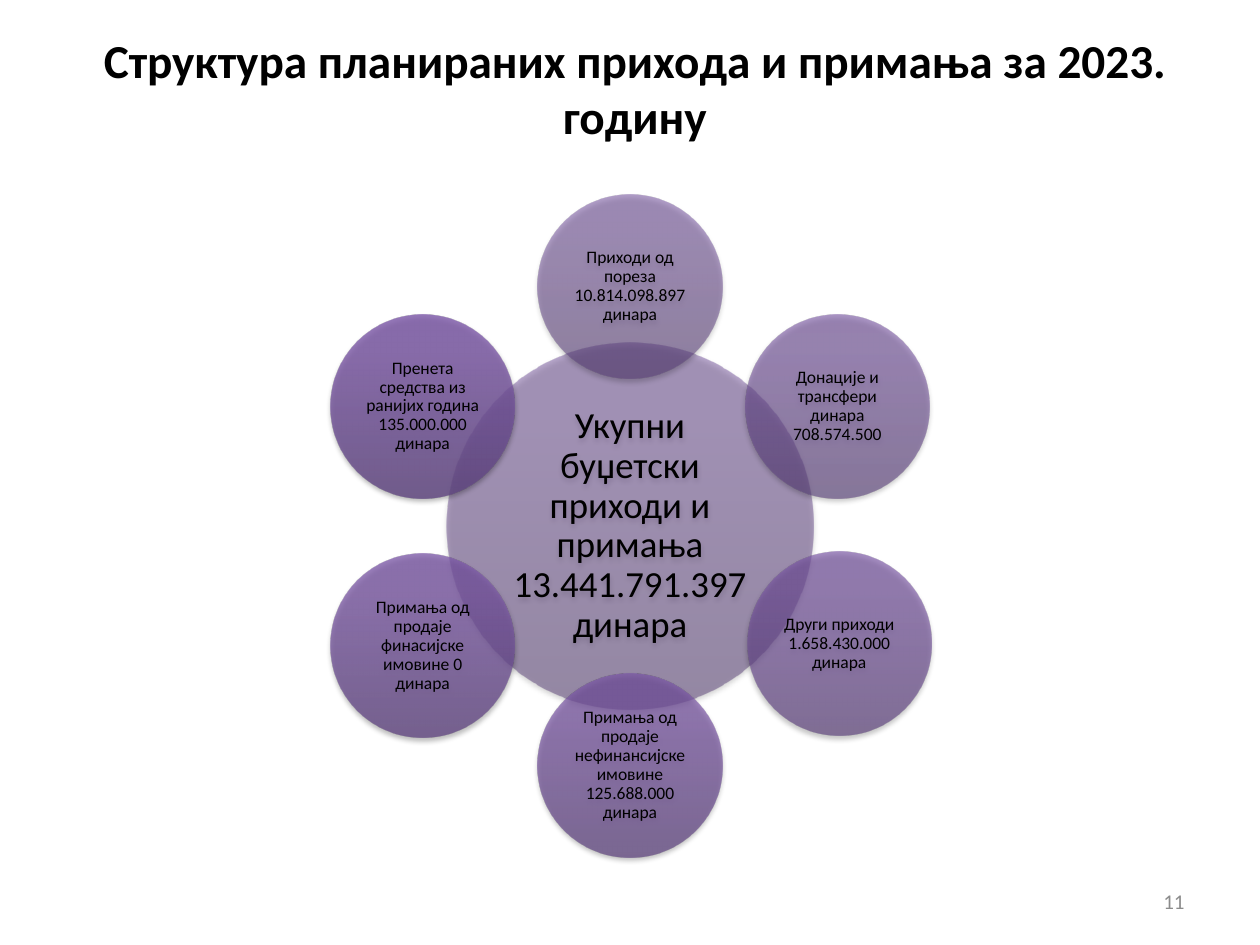
"""Build the slide on the structure of planned budget revenues for 2023."""
from dataclasses import dataclass
from math import cos, radians, sin

from lxml import etree
from pptx import Presentation
from pptx.dml.color import RGBColor
from pptx.enum.shapes import MSO_SHAPE
from pptx.enum.text import MSO_ANCHOR, PP_ALIGN
from pptx.oxml.ns import qn
from pptx.slide import Slide
from pptx.text.text import TextFrame
from pptx.util import Pt

OVAL = MSO_SHAPE.OVAL
MIDDLE = MSO_ANCHOR.MIDDLE
CENTER, RIGHT = PP_ALIGN.CENTER, PP_ALIGN.RIGHT


@dataclass(frozen=True)
class Theme:
    font: str = "Calibri"
    ink: str = "000000"
    muted: str = "8C8C8C"
    shadow: str = "000000"
    shadow_opacity: int = 35
    title_size: float = 27
    total_size: float = 21
    source_size: float = 10
    number_size: float = 12
    stop_positions: tuple[int, ...] = (0, 80, 100)


@dataclass(frozen=True)
class Bubble:
    label: str
    colours: tuple[str, str, str]
    opacity: int
    nudge_x: float = 0
    nudge_y: float = 0


THEME = Theme()
HUB_X, HUB_Y, ORBIT = 360, 300.6, 136.8
HUB_DIAMETER, SOURCE_DIAMETER = 209.5, 105.1

TOTAL = Bubble("Укупни буџетски приходи и примања 13.441.791.397 динара",
               ("563D74", "705097", "704F99"), 50)
SOURCES = (
    Bubble("Приходи од пореза 10.814.098.897 динара",
           ("583E76", "72519A", "72509C"), 55),
    Bubble("Донације и трансфери динара 708.574.500",
           ("593F79", "74529D", "74519F"), 60),
    Bubble("Други приходи 1.658.430.000 динара",
           ("5B407B", "7653A0", "7652A2"), 65, 1.1, -1.1),
    Bubble("Примања од продаје нефинансијске имовине 125.688.000 динара",
           ("5C417D", "7854A3", "7853A5"), 70),
    Bubble("Примања од продаје финасијске имовине 0 динара",
           ("5E437F", "7A57A4", "7A56A7"), 75),
    Bubble("Пренета средства из ранијих година 135.000.000 динара",
           ("5F4580", "7C59A6", "7C58A8"), 80),
)


def add_node(parent: etree._Element, tag: str, **attributes: object) -> etree._Element:
    """Append a DrawingML child with the given attributes."""
    values = {key: str(value) for key, value in attributes.items()}
    return etree.SubElement(parent, qn(f"a:{tag}"), values)


def add_colour(parent: etree._Element, colour: str, opacity: int) -> None:
    """Append a colour with its opacity in percent."""
    add_node(add_node(parent, "srgbClr", val=colour), "alpha", val=opacity * 1000)


def write(frame: TextFrame, text: str, size: float, colour: str,
          align: PP_ALIGN, bold: bool = False) -> None:
    """Set and format the single paragraph of a text frame."""
    frame.text = text
    frame.word_wrap = True
    frame.vertical_anchor = MIDDLE
    paragraph = frame.paragraphs[0]
    paragraph.alignment = align
    font = paragraph.runs[0].font
    font.name, font.size, font.bold = THEME.font, Pt(size), bold
    font.color.rgb = RGBColor.from_string(colour)


def add_bubble(slide: Slide, bubble: Bubble, x: float, y: float,
               diameter: float, size: float) -> None:
    """Draw a translucent shaded circle, centred on x and y, with its label."""
    circle = slide.shapes.add_shape(
        OVAL, Pt(x - diameter / 2), Pt(y - diameter / 2), Pt(diameter), Pt(diameter))
    circle.line.fill.background()
    circle.shadow.inherit = False
    properties = circle._element.spPr

    gradient = etree.Element(qn("a:gradFill"), rotWithShape="1")
    stops = add_node(gradient, "gsLst")
    for position, colour in zip(THEME.stop_positions, bubble.colours):
        add_colour(add_node(stops, "gs", pos=position * 1000), colour, bubble.opacity)
    add_node(gradient, "lin", ang=270 * 60000, scaled=0)
    properties.find(qn("a:prstGeom")).addnext(gradient)

    shadow = add_node(properties.find(qn("a:effectLst")), "outerShdw",
                      blurRad=Pt(3.1), dist=Pt(1.8), dir=90 * 60000, rotWithShape=0)
    add_colour(shadow, THEME.shadow, THEME.shadow_opacity)

    frame = circle.text_frame
    inset = Pt(size / 10)
    frame.margin_left = frame.margin_right = inset
    frame.margin_top = frame.margin_bottom = inset
    write(frame, bubble.label, size, THEME.ink, CENTER)
    frame.paragraphs[0].line_spacing = 0.9


def main() -> None:
    """Assemble and save the slide."""
    deck = Presentation()
    deck.slide_width, deck.slide_height = Pt(720), Pt(540)
    slide = deck.slides.add_slide(deck.slide_layouts[6])

    title = slide.shapes.add_textbox(Pt(38.9), Pt(19.4), Pt(648), Pt(61.2))
    write(title.text_frame, "Структура планираних прихода и примања за 2023. годину",
          THEME.title_size, THEME.ink, CENTER, bold=True)
    number = slide.shapes.add_textbox(Pt(516), Pt(500.5), Pt(168), Pt(28.8))
    write(number.text_frame, "11", THEME.number_size, THEME.muted, RIGHT)

    add_bubble(slide, TOTAL, HUB_X, HUB_Y, HUB_DIAMETER, THEME.total_size)
    for index, source in enumerate(SOURCES):
        angle = radians(index * 360 / len(SOURCES))
        add_bubble(slide, source,
                   HUB_X + ORBIT * sin(angle) + source.nudge_x,
                   HUB_Y - ORBIT * cos(angle) + source.nudge_y,
                   SOURCE_DIAMETER, THEME.source_size)

    deck.save("out.pptx")


if __name__ == "__main__":
    main()
